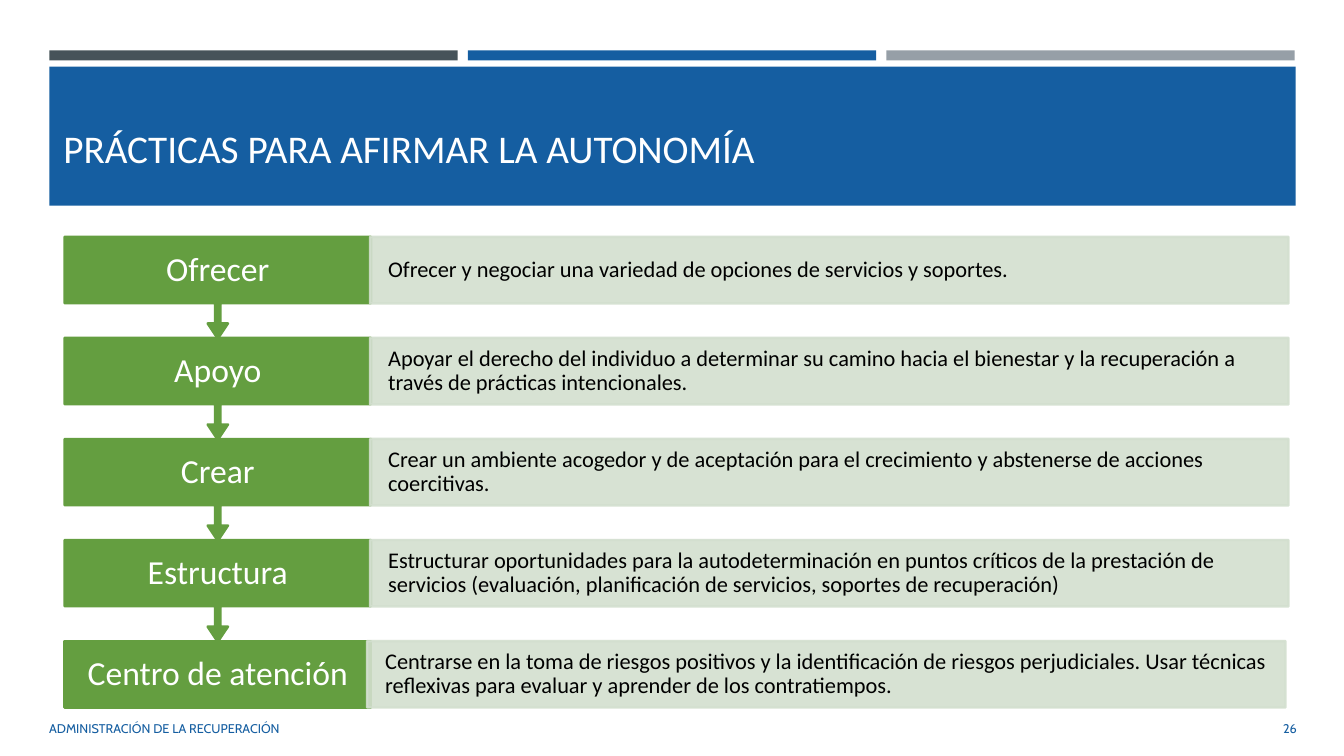
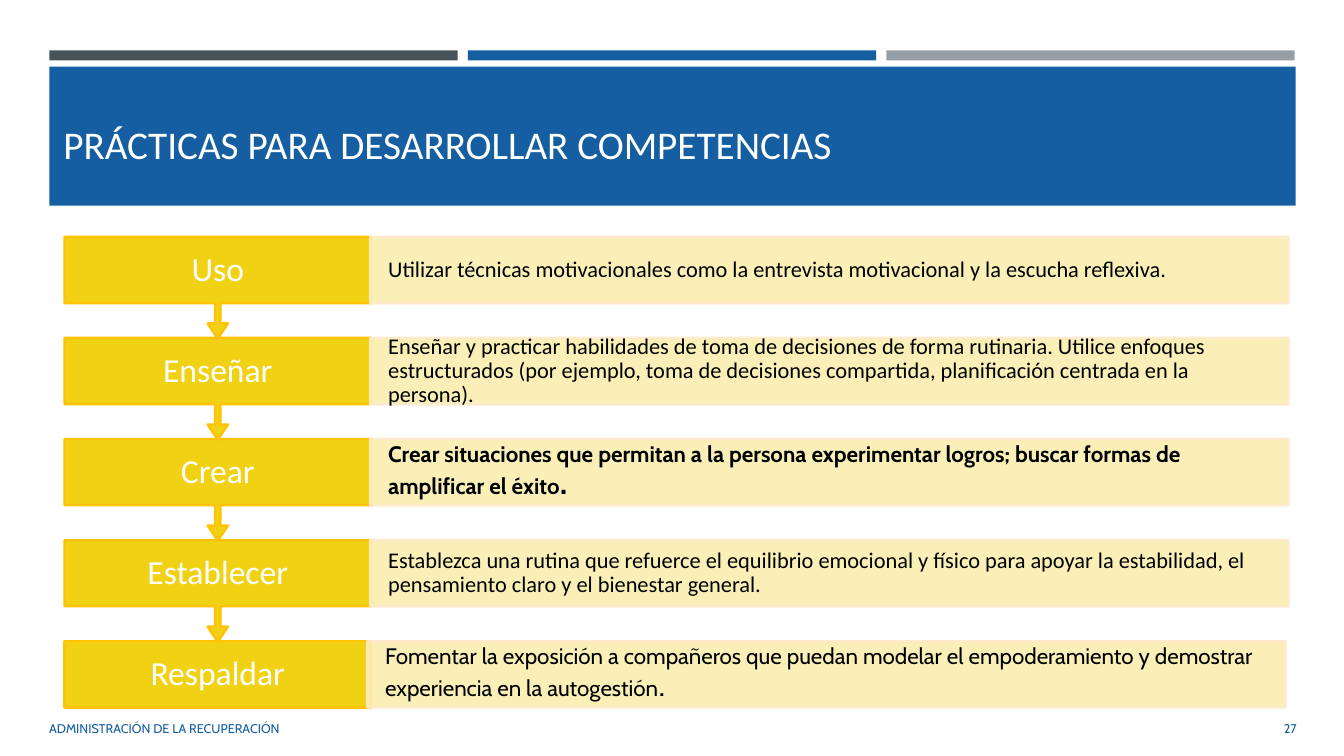
from lxml import etree
from pptx import Presentation
from pptx.dml.color import RGBColor
from pptx.enum import shapes, text
from pptx.oxml.ns import qn
from pptx.util import Inches, Pt

# Content
FOOTER = "ADMINISTRACIÓN DE LA RECUPERACIÓN"
SLIDES = [
    {
        "title": "PRÁCTICAS PARA AFIRMAR LA AUTONOMÍA",
        "title_top": 0.93,
        "number": 26,
        "palette": "green",
        "steps": [
            ("Ofrecer", "Ofrecer y negociar una variedad de opciones de servicios y soportes."),
            ("Apoyo", "Apoyar el derecho del individuo a determinar su camino hacia el bienestar "
                      "y la recuperación a través de prácticas intencionales."),
            ("Crear", "Crear un ambiente acogedor y de aceptación para el crecimiento y "
                      "abstenerse de acciones coercitivas."),
            ("Estructura", "Estructurar oportunidades para la autodeterminación en puntos críticos "
                           "de la prestación de servicios (evaluación, planificación de servicios, "
                           "soportes de recuperación)"),
            ("Centro de atención", "Centrarse en la toma de riesgos positivos y la identificación de "
                                   "riesgos perjudiciales. Usar técnicas reflexivas para evaluar y "
                                   "aprender de los contratiempos."),
        ],
        "styles": {},
    },
    {
        "title": "PRÁCTICAS PARA DESARROLLAR COMPETENCIAS",
        "title_top": 0.89,
        "number": 27,
        "palette": "yellow",
        "steps": [
            ("Uso", "Utilizar técnicas motivacionales como la entrevista motivacional y la "
                    "escucha reflexiva."),
            ("Enseñar", "Enseñar y practicar habilidades de toma de decisiones de forma rutinaria. "
                        "Utilice enfoques estructurados (por ejemplo, toma de decisiones compartida, "
                        "planificación centrada en la persona)."),
            ("Crear", "Crear situaciones que permitan a la persona experimentar logros; buscar "
                      "formas de amplificar el éxito."),
            ("Establecer", "Establezca una rutina que refuerce el equilibrio emocional y físico para "
                           "apoyar la estabilidad, el pensamiento claro y el bienestar general."),
            ("Respaldar", "Fomentar la exposición a compañeros que puedan modelar el empoderamiento "
                          "y demostrar experiencia en la autogestión."),
        ],
        # Rows in the accent font, which end in a larger full stop
        "styles": {"Crear": {"bold": True}, "Respaldar": {"bold": False}},
    },
]

# Shared style
COLORS = {"slate": "465359", "blue": "155EA1", "gray": "969FA7",
          "white": "FFFFFF", "black": "000000"}
PALETTES = {
    "green": {"label": "649E40", "label_line": "649E40", "detail": "D3DFCF", "detail_line": "D3DFCF"},
    "yellow": {"label": "F1D113", "label_line": "FEC306", "detail": "FAEFB0", "detail_line": "FFE9CC"},
}
BODY_FONT, ACCENT_FONT = "Calibri", "Cabin"
LEFT, CENTER, RIGHT = text.PP_ALIGN.LEFT, text.PP_ALIGN.CENTER, text.PP_ALIGN.RIGHT
RECT, CALLOUT = shapes.MSO_SHAPE.RECTANGLE, shapes.MSO_SHAPE.UP_ARROW_CALLOUT

# Geometry in inches
BAND_LEFT, BAND_WIDTH, STRIP_WIDTH, STRIP_STEP = 0.49, 12.36, 4.05, 4.15
LABEL_LEFT, LABEL_WIDTH = 0.64, 3.04
DETAIL_LEFT, DETAIL_WIDTH = 3.67, 9.11
LAST_DETAIL_SHIFT = -0.03
ROW_TOP, ROW_STEP, ROW_HEIGHT, CALLOUT_HEIGHT = 2.35, 1.0025, 0.66, 1.01
CALLOUT_ADJUSTMENTS = (0.05, 0.1, 0.15, 0.65)


def rgb(hex_color):
    return RGBColor.from_string(hex_color)


def add_block(slide, kind, box, fill, line=None, opacity=None):
    block = slide.shapes.add_shape(kind, *map(Inches, box))
    block.shadow.inherit = False
    block.fill.solid()
    block.fill.fore_color.rgb = rgb(fill)
    if line:
        block.line.color.rgb = rgb(line)
        block.line.width = Pt(1.75)
    else:
        block.line.fill.background()
    if opacity:
        for color in block._element.spPr.iter(qn("a:srgbClr")):
            etree.SubElement(color, qn("a:alpha"), val=str(opacity * 1000))
    return block


def write(shape, words, size, color, font=BODY_FONT, align=LEFT, inset=0.1,
          spacing=None, bold=False):
    frame = shape.text_frame
    frame.word_wrap = True
    frame.vertical_anchor = text.MSO_ANCHOR.MIDDLE
    frame.margin_left = frame.margin_right = Inches(inset)
    frame.margin_top = frame.margin_bottom = 0
    frame.text = words
    paragraph = frame.paragraphs[0]
    paragraph.alignment = align
    if spacing:
        paragraph.line_spacing = spacing
    for run in paragraph.runs:
        style_run(run, size, color, font, bold)
    return paragraph


def style_run(run, size, color, font, bold):
    run.font.size, run.font.name, run.font.bold = Pt(size), font, bold
    run.font.color.rgb = rgb(color)


def add_words(slide, box, *args, **options):
    write(slide.shapes.add_textbox(*map(Inches, box)), *args, **options)


def add_frame(slide, title, title_top, number):
    # Strips, title band and footer
    for i, name in enumerate(("slate", "blue", "gray")):
        add_block(slide, RECT, (BAND_LEFT + i * STRIP_STEP, 0.5, STRIP_WIDTH, 0.1), COLORS[name])
    add_block(slide, RECT, (BAND_LEFT, 0.66, BAND_WIDTH, 1.38), COLORS["blue"])
    add_words(slide, (0.53, title_top, 12.25, 1.08), title, 28, COLORS["white"])
    add_words(slide, (0.39, 7.03, 7.46, 0.4), FOOTER, 9, COLORS["blue"], ACCENT_FONT)
    add_words(slide, (11.81, 7.03, 1.15, 0.4), str(number), 9, COLORS["blue"], ACCENT_FONT, RIGHT)


def add_step(slide, index, is_last, label, detail, palette, accent):
    top = ROW_TOP + index * ROW_STEP
    # Label, with an arrow to the next step
    kind, height = (RECT, ROW_HEIGHT) if is_last else (CALLOUT, CALLOUT_HEIGHT)
    label_block = add_block(slide, kind, (LABEL_LEFT, top, LABEL_WIDTH, height),
                            palette["label"], palette["label_line"])
    if not is_last:
        label_block.rotation = 180
        for i, value in enumerate(CALLOUT_ADJUSTMENTS):
            label_block.adjustments[i] = value
    add_words(slide, (LABEL_LEFT, top, LABEL_WIDTH, ROW_HEIGHT), label, 24,
              COLORS["white"], align=CENTER, spacing=0.9)

    # Detail
    left = DETAIL_LEFT + (LAST_DETAIL_SHIFT if is_last else 0)
    detail_block = add_block(slide, RECT, (left, top, DETAIL_WIDTH, ROW_HEIGHT),
                             palette["detail"], palette["detail_line"], opacity=90)
    if accent is None:
        write(detail_block, detail, 16, COLORS["black"], inset=0.18, spacing=0.9)
    else:
        paragraph = write(detail_block, detail[:-1], 16, COLORS["black"], ACCENT_FONT,
                          inset=0.18, spacing=0.9, **accent)
        stop = paragraph.add_run()
        stop.text = detail[-1]
        style_run(stop, 23, COLORS["black"], ACCENT_FONT, **accent)


def main():
    deck = Presentation()
    deck.slide_width, deck.slide_height = Inches(13.33), Inches(7.5)
    for content in SLIDES:
        slide = deck.slides.add_slide(deck.slide_layouts[6])
        add_frame(slide, content["title"], content["title_top"], content["number"])
        steps = content["steps"]
        # Bottom row first, so each arrow tip lies over the next label
        for index, (label, detail) in reversed(list(enumerate(steps))):
            add_step(slide, index, index == len(steps) - 1, label, detail,
                     PALETTES[content["palette"]], content["styles"].get(label))
    deck.save("out.pptx")


if __name__ == "__main__":
    main()
